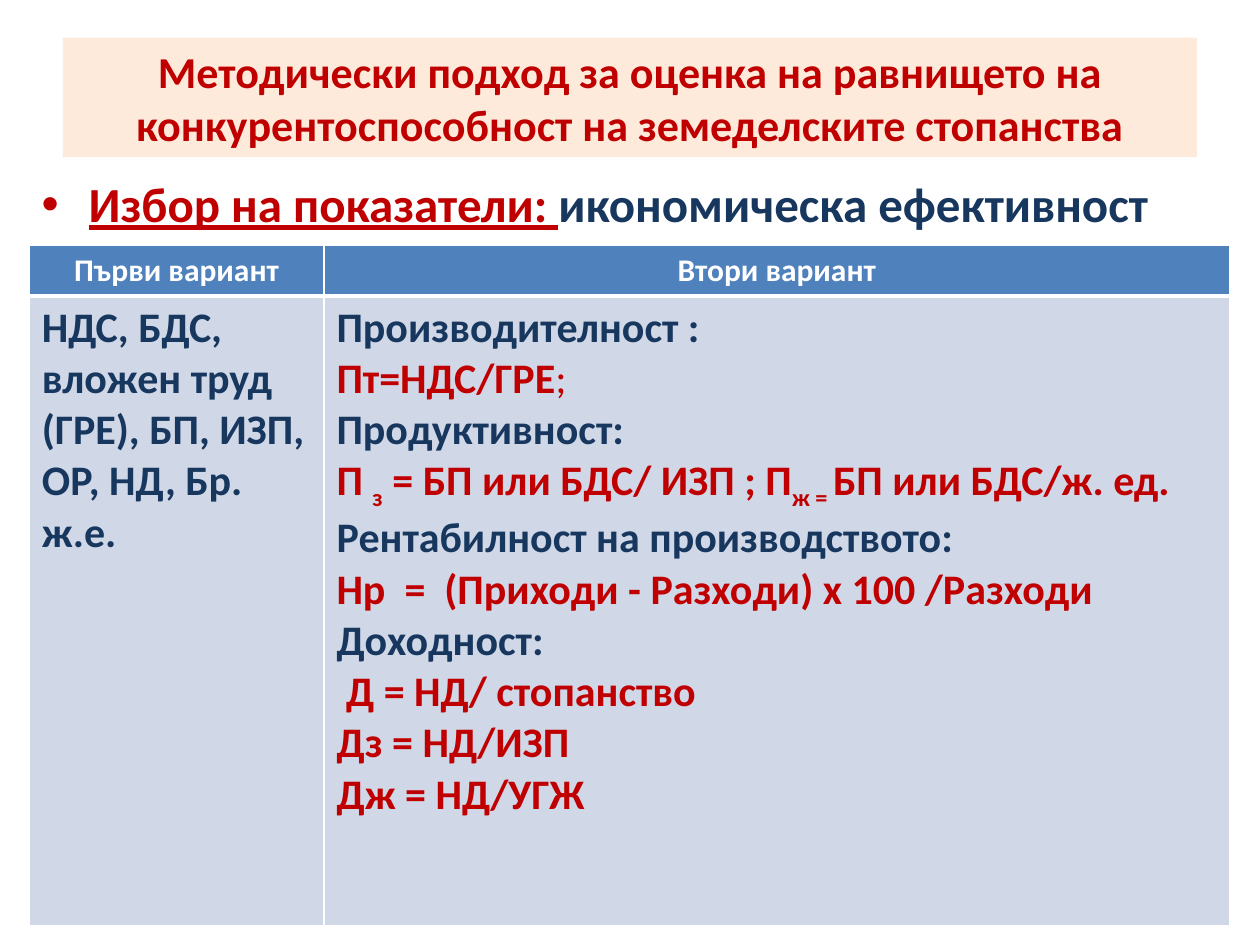
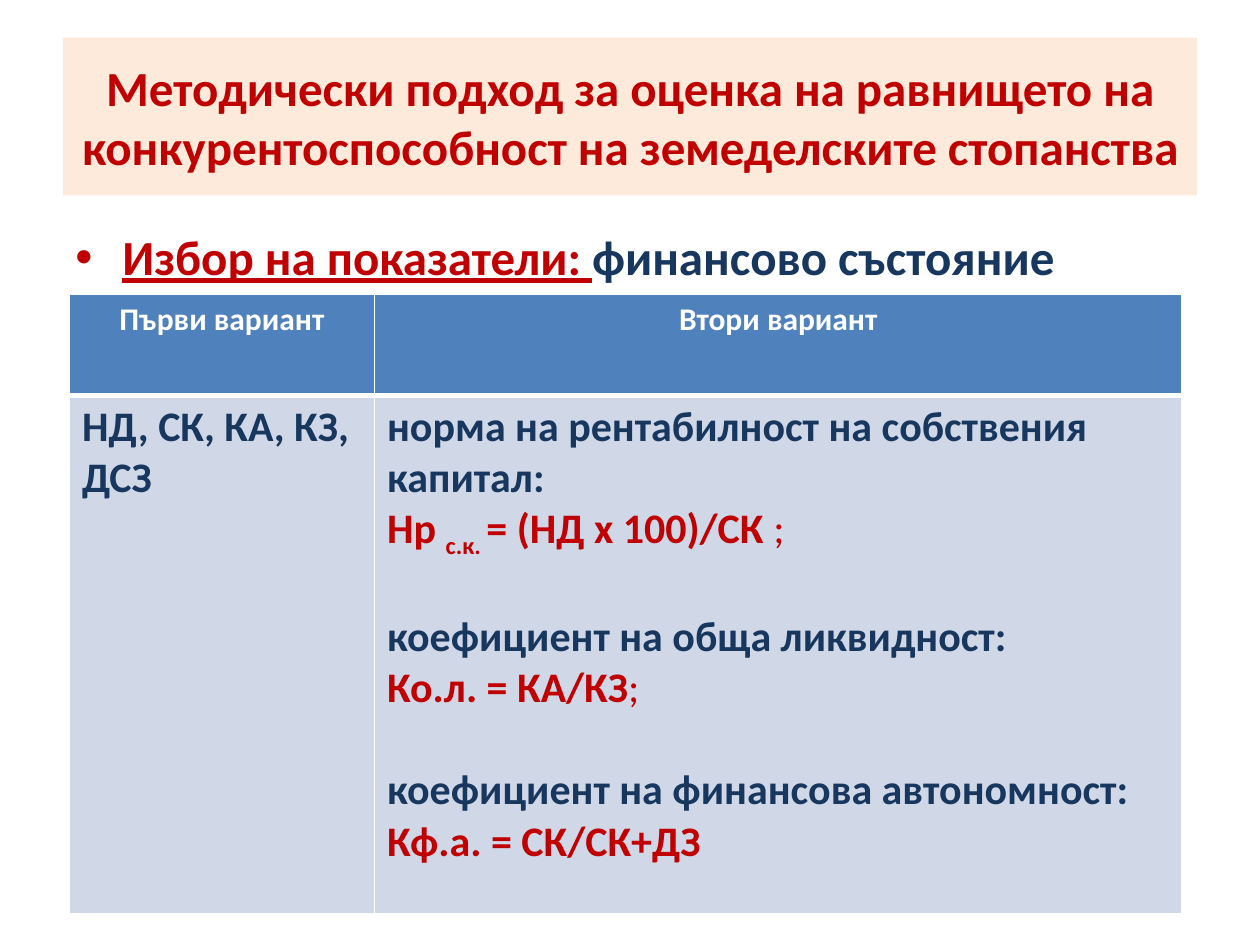
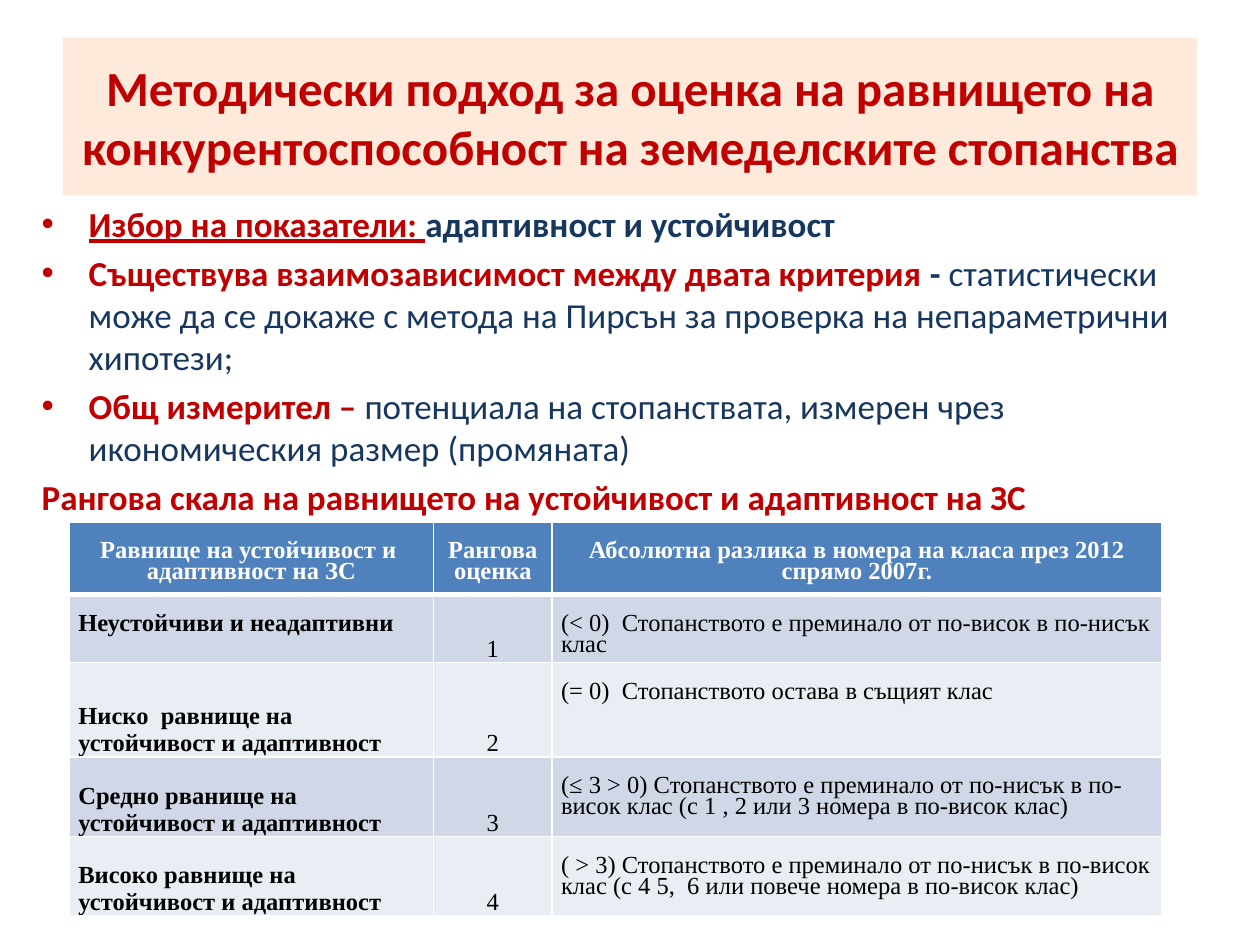
from dataclasses import dataclass

from lxml import etree
from pptx import Presentation
from pptx.dml.color import RGBColor
from pptx.enum.text import MSO_ANCHOR, PP_ALIGN
from pptx.oxml.ns import qn
from pptx.util import Cm, Pt

LEFT, CENTER = PP_ALIGN.LEFT, PP_ALIGN.CENTER
TOP, MIDDLE, BOTTOM = MSO_ANCHOR.TOP, MSO_ANCHOR.MIDDLE, MSO_ANCHOR.BOTTOM


@dataclass(frozen=True)
class Theme:
    red: str = "C00000"
    navy: str = "17375E"
    black: str = "000000"
    white: str = "FFFFFF"
    title_band: str = "FDEADA"
    header: str = "4F81BD"
    bands: tuple = ("D0D8E8", "E9EDF4")
    font: str = "Calibri"
    scale_font: str = "Times New Roman"
    title_size: float = 28
    tight_title_size: float = 25.2
    topic_size: float = 28
    points_size: float = 20
    header_size: float = 18
    cell_size: float = 24
    scale_size: float = 14
    thin: float = 1
    thick: float = 3


THEME = Theme()
NAVY = {"color": THEME.navy}
RED = {"color": THEME.red}
PLAIN_RED = {"color": THEME.red, "bold": False}
PLAIN_NAVY = {"color": THEME.navy, "bold": False}
SUB = {"color": THEME.red, "subscript": True}
LINKED = {"color": THEME.red, "underline": True}

TITLE = ("Методически подход за оценка на равнището на "
         "конкурентоспособност на земеделските стопанства")
CHOICE = ("Избор на показатели: ", LINKED)
VARIANTS = ["Първи вариант", "Втори вариант"]

VARIANT_SLIDES = [
    {
        "title_height": 2.41, "title_size": THEME.tight_title_size,
        "topic": "икономическа ефективност",
        "topic_box": (0.59, 3.38, 24.2, 14.68),
        "corner": (0.59, 4.95), "columns": (5.94, 18.26), "rows": (1, 12.7),
        "section_gap": 0,
        "indicators": "НДС, БДС, вложен труд (ГРЕ), БП, ИЗП, ОР, НД, Бр. ж.е.",
        "sections": [
            ("Производителност :", [[("Пт=НДС/ГРЕ", RED), (";", PLAIN_RED)]]),
            ("Продуктивност:", [[("П ", RED), ("з", SUB), (" = БП или БДС/ ИЗП ; П", RED),
                                 ("ж = ", SUB), ("БП или БДС/ж. ед.", RED)]]),
            ("Рентабилност на производството:",
             [[("Нр  =  (Приходи - Разходи) х 100 /Разходи", RED)]]),
            ("Доходност:", [[(" Д = НД/ стопанство", RED)], [("Дз = НД/ИЗП", RED)],
                            [("Дж = НД/УГЖ", RED)]]),
        ],
    },
    {
        "title_height": 3.18, "title_size": THEME.title_size,
        "topic": "финансово състояние",
        "topic_box": (1.27, 4.45, 22.86, 12.57),
        "corner": (1.4, 5.94), "columns": (6.15, 16.28), "rows": (2.03, 10.46),
        "section_gap": 29,
        "indicators": "НД, СК, КА, КЗ, ДСЗ",
        "sections": [
            ("норма на рентабилност на собствения капитал:",
             [[("Нр ", RED), ("с.к. ", SUB), ("= (НД х 100)/СК ", RED), (";", PLAIN_RED)]]),
            ("коефициент на обща ликвидност:", [[("Ко.л. = КА/КЗ", RED), (";", PLAIN_RED)]]),
            ("коефициент на финансова автономност:", [[("Кф.а. = СК/СК+ДЗ", RED)]]),
        ],
    },
]

STABILITY_POINTS = [
    [CHOICE, ("адаптивност и устойчивост", NAVY)],
    [("Съществува взаимозависимост между двата критерия ", RED), ("- ", NAVY),
     ("статистически може да се докаже с метода на Пирсън за проверка на "
      "непараметрични хипотези;", PLAIN_NAVY)],
    [("Общ измерител – ", RED),
     ("потенциала на стопанствата, измерен чрез икономическия размер (промяната)", PLAIN_NAVY)],
]
SCALE_CAPTION = "Рангова скала на равнището на устойчивост и адаптивност на ЗС"
SCALE_HEADERS = ["Равнище на устойчивост и  адаптивност на ЗС", "Рангова оценка",
                 "Абсолютна разлика в номера на класа през 2012 спрямо 2007г."]
SCALE = [
    ("Неустойчиви и неадаптивни",
     "(< 0)  Стопанството е преминало от по-висок в по-нисък клас"),
    ("Ниско  равнище на устойчивост и адаптивност",
     "(= 0)  Стопанството остава в същият клас"),
    ("Средно рванище на устойчивост и адаптивност",
     "(≤ 3 > 0) Стопанството е преминало от по-нисък в по-висок клас "
     "(с 1 , 2 или 3 номера в по-висок клас)"),
    ("Високо равнище на устойчивост и адаптивност",
     "( > 3) Стопанството е преминало от по-нисък в по-висок клас "
     "(с 4 5,  6 или повече номера в по-висок клас)"),
]


def write(frame, text, size, color=THEME.navy, font=THEME.font, bold=True, align=LEFT,
          before=0, spacing=None, hanging=False, bullet=False):
    runs = [(text, {})] if isinstance(text, str) else text
    paragraph = frame.paragraphs[0]
    if paragraph.runs:
        paragraph = frame.add_paragraph()
    paragraph.alignment = align
    paragraph.space_before = Pt(before)
    if spacing:
        paragraph.line_spacing = Pt(spacing)
    if hanging:
        properties = paragraph._p.get_or_add_pPr()
        properties.set("marL", str(Cm(0.95)))
        properties.set("indent", str(-Cm(0.95)))
        if bullet:
            etree.SubElement(properties, qn("a:buFont")).set("typeface", "Arial")
            etree.SubElement(properties, qn("a:buChar")).set("char", "•")
    for words, look in runs:
        run = paragraph.add_run()
        run.text = words
        run.font.name = font
        run.font.size = Pt(size)
        run.font.bold = look.get("bold", bold)
        run.font.underline = look.get("underline", False)
        run.font.color.rgb = RGBColor.from_string(look.get("color", color))
        if look.get("subscript"):
            run._r.get_or_add_rPr().set("baseline", "-25000")


def text_area(slide, box, anchor=TOP):
    area = slide.shapes.add_textbox(*map(Cm, box))
    area.text_frame.word_wrap = True
    area.text_frame.vertical_anchor = anchor
    return area


def add_title(slide, height, size):
    band = text_area(slide, (1.27, 0.76, 22.86, height), MIDDLE)
    band.fill.solid()
    band.fill.fore_color.rgb = RGBColor.from_string(THEME.title_band)
    write(band.text_frame, TITLE, size, color=THEME.red, align=CENTER)


def add_points(frame, points, size):
    for point in points:
        write(frame, point, size, before=size / 5, hanging=True, bullet=True)


def style_cell(cell, fill, top, bottom):
    properties = cell._tc.get_or_add_tcPr()
    sides = {"a:lnL": THEME.thin, "a:lnR": THEME.thin, "a:lnT": top, "a:lnB": bottom}
    for side, width in sides.items():
        line = etree.SubElement(properties, qn(side), w=str(Pt(width)))
        paint = etree.SubElement(line, qn("a:solidFill"))
        etree.SubElement(paint, qn("a:srgbClr"), val=THEME.white)
    cell.fill.solid()
    cell.fill.fore_color.rgb = RGBColor.from_string(fill)


def add_grid(slide, corner, columns, rows):
    size = (sum(columns), sum(rows))
    grid = slide.shapes.add_table(len(rows), len(columns), *map(Cm, corner + size)).table
    grid.first_row = grid.horz_banding = False
    for column, width in zip(grid.columns, columns):
        column.width = Cm(width)
    for index, height in enumerate(rows):
        grid.rows[index].height = Cm(height)
        fill = THEME.bands[(index - 1) % 2] if index else THEME.header
        top = THEME.thick if index == 1 else THEME.thin
        bottom = THEME.thin if index else THEME.thick
        for cell in grid.rows[index].cells:
            style_cell(cell, fill, top, bottom)
    return grid


def build_variants(slide, content):
    add_title(slide, content["title_height"], content["title_size"])
    topic = text_area(slide, content["topic_box"]).text_frame
    add_points(topic, [[CHOICE, (content["topic"], NAVY)]], THEME.topic_size)
    grid = add_grid(slide, content["corner"], content["columns"], content["rows"])
    for column, variant in enumerate(VARIANTS):
        write(grid.cell(0, column).text_frame, variant, THEME.header_size,
              color=THEME.white, align=CENTER)
    write(grid.cell(1, 0).text_frame, content["indicators"], THEME.cell_size)
    formulas = grid.cell(1, 1).text_frame
    for index, (heading, lines) in enumerate(content["sections"]):
        write(formulas, heading, THEME.cell_size,
              before=content["section_gap"] if index else 0)
        for line in lines:
            write(formulas, line, THEME.cell_size)


def write_scale(cell, text, lowered=True, anchor=TOP, **look):
    cell.margin_left = cell.margin_right = Cm(0.18)
    cell.margin_top = Pt(12) if lowered else 0
    cell.margin_bottom = 0
    cell.vertical_anchor = anchor
    write(cell.text_frame, text, THEME.scale_size, font=THEME.scale_font,
          spacing=12 if lowered else None, **look)


def build_stability(slide):
    add_title(slide, 3.18, THEME.title_size)
    body = text_area(slide, (0.59, 3.96, 23.83, 14.48)).text_frame
    add_points(body, STABILITY_POINTS, THEME.points_size)
    write(body, SCALE_CAPTION, THEME.points_size, color=THEME.red,
          before=THEME.points_size / 5, hanging=True)
    grid = add_grid(slide, (1.4, 10.52), (7.34, 2.39, 12.29), (1.47, 1.37, 1.9, 1.6, 1.6))
    for column, header in enumerate(SCALE_HEADERS):
        write_scale(grid.cell(0, column), header, color=THEME.white, align=CENTER)
    for rank, (level, difference) in enumerate(SCALE, 1):
        first = rank == 1
        write_scale(grid.cell(rank, 0), level, lowered=first,
                    anchor=TOP if first else BOTTOM, color=THEME.black)
        write_scale(grid.cell(rank, 1), str(rank), lowered=False, anchor=BOTTOM,
                    color=THEME.black, bold=False, align=CENTER)
        write_scale(grid.cell(rank, 2), difference, color=THEME.black, bold=False)


def main():
    deck = Presentation()
    deck.slide_width, deck.slide_height = Cm(25.4), Cm(19.05)
    blank = deck.slide_layouts[6]
    for content in VARIANT_SLIDES:
        build_variants(deck.slides.add_slide(blank), content)
    build_stability(deck.slides.add_slide(blank))
    deck.save("out.pptx")


if __name__ == "__main__":
    main()
